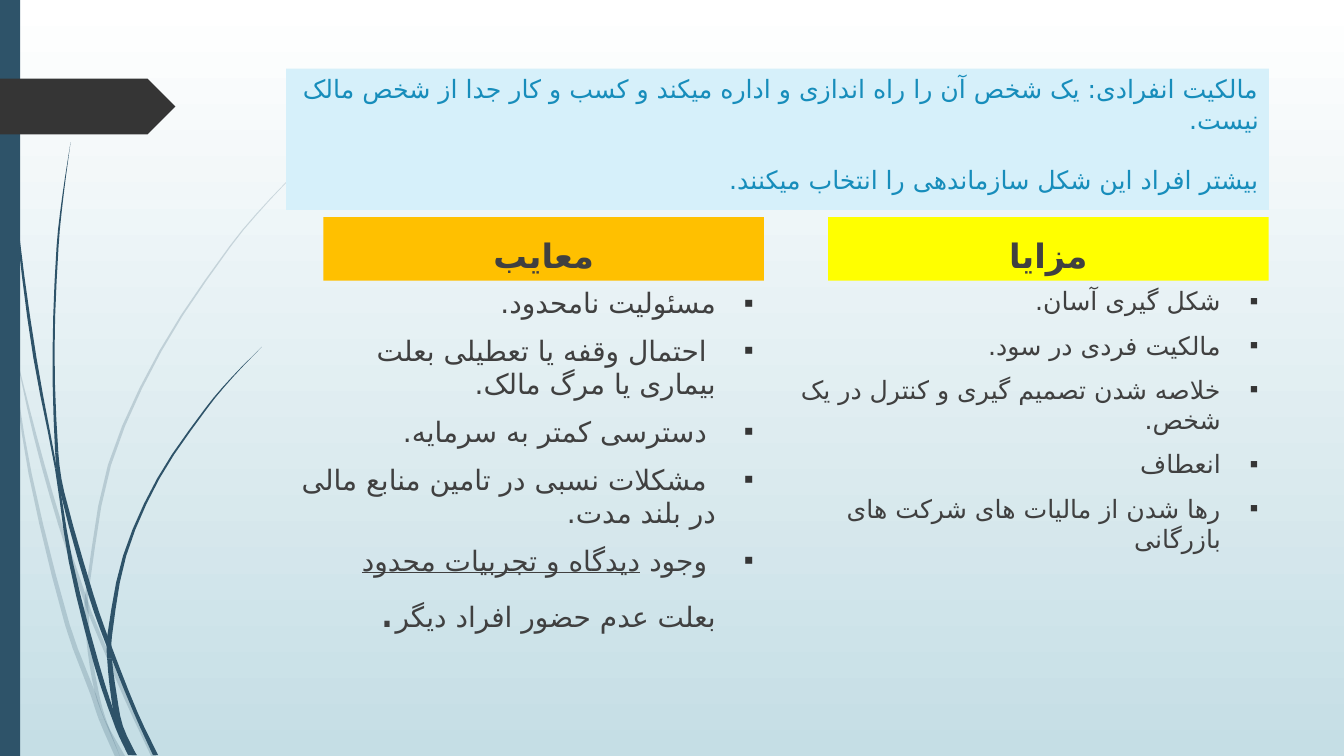
from itertools import pairwise
from math import dist

from lxml import etree
from pptx import Presentation
from pptx import util as u
from pptx.dml import color
from pptx.enum import shapes, text
from pptx.oxml import ns

FONT, ARABIC_FONT = "Quicksand", "DejaVu Sans"
NAVY, CHARCOAL, BODY_GRAY, TITLE_BLUE = "2E5369", "353535", "404040", "178DBB"
SLIDE_WIDTH, SLIDE_HEIGHT = 33.87, 19.05
HEADING_TOP, HEADING_WIDTH, HEADING_HEIGHT = 5.47, 11.1, 1.6
LIST_WIDTH, LIST_HEIGHT = 12.06, 9.32
CURVE_STEPS = 3

PALE_WISPS = [
    ([1, 5], [(0, 7.38, 0.1), (0.28, 8.9, 0.03), (0.76, 11.94, 0.08),
              (1.7, 15.75, 0.12), (2.35, 17.5, 0.14), (2.57, 18.14, 0.15),
              (3.02, 19.05, 0.26)]),
    ([3, 4], [(0.36, 8.76, 0), (0.89, 11, 0.08), (1.52, 13.23, 0.1),
              (2.18, 15.19, 0.1), (2.29, 15.5, 0.1), (3.18, 17.6, 0.1),
              (3.87, 19.05, 0.13)]),
    ([5, 6, 8], [(7.92, 3.89, 0), (6.81, 5.02, 0.03), (5.8, 6.21, 0.04),
                 (4.04, 8.85, 0.06), (2.76, 11.72, 0.08), (2.2, 14.88, 0.08),
                 (2.18, 15.37, 0.1), (2.26, 16.41, 0.1), (2.44, 17.45, 0.1),
                 (2.62, 18.05, 0.05), (3.02, 19.05, 0)]),
]
DARK_WISPS = [
    ([4, 7], [(0.09, 0, 0.02), (0.19, 2.79, 0.03), (0.46, 5.92, 0.05),
              (0.88, 9.02, 0.08), (1.41, 11.81, 0.05), (1.78, 14.14, 0.1),
              (2.43, 16.73, 0.13), (2.97, 18.34, 0.12), (3.34, 19.03, 0.22)]),
    ([4, 5, 7], [(1.78, 3.58, 0), (1.59, 4.9, 0.03), (1.45, 6.22, 0.05),
                 (1.35, 8.86, 0.05), (1.43, 11.4, 0.08), (1.57, 12.4, 0.1),
                 (2.3, 15.01, 0.13), (2.74, 16.26, 0.12), (3.42, 17.96, 0.1),
                 (3.92, 19.03, 0.13)]),
    ([5, 6, 8], [(6.6, 8.74, 0), (5.87, 9.49, 0.03), (5.19, 10.3, 0.05),
                 (3.99, 12.06, 0.06), (3.14, 14.01, 0.08), (2.76, 16.05, 0.12),
                 (2.76, 16.59, 0.12), (2.87, 17.53, 0.15), (3.02, 18.29, 0.15),
                 (3.38, 19.03, 0.12)]),
]

TITLE = [
    "مالکیت انفرادی: یک شخص آن را راه اندازی و اداره میکند و کسب و کار جدا از شخص مالک نیست.",
    "بیشتر افراد این شکل سازماندهی را انتخاب میکنند.",
]
DISADVANTAGES = [
    ["مسئولیت نامحدود."],
    [" احتمال وقفه یا تعطیلی بعلت بیماری یا مرگ مالک."],
    [" دسترسی کمتر به سرمایه."],
    [" مشکلات نسبی در تامین منابع مالی در بلند مدت."],
    [" وجود ", "دیدگاه و تجربیات محدود ", "بعلت عدم حضور افراد دیگر", "."],
]
ADVANTAGES = [
    ["شکل گیری آسان."],
    ["مالکیت فردی در سود."],
    ["خلاصه شدن تصمیم گیری و کنترل در یک شخص."],
    ["انعطاف"],
    ["رها شدن از مالیات های شرکت های بازرگانی"],
]


def rgb(value):
    return color.RGBColor.from_string(value)


def fill_solid(shape, value):
    shape.fill.solid()
    shape.fill.fore_color.rgb = rgb(value)


def paint(shape, value, alpha=None):
    shape.shadow.inherit = False
    shape.line.fill.background()
    fill_solid(shape, value)
    if alpha:
        tint = shape.element.spPr.find(".//" + ns.qn("a:srgbClr"))
        etree.SubElement(tint, ns.qn("a:alpha"), val=str(alpha * 1000))


def add_block(slide, kind, top, width, height, value):
    block = slide.shapes.add_shape(kind, 0, u.Cm(top), u.Cm(width), u.Cm(height))
    paint(block, value)


def smooth(knots):
    """Return points of a Hermite curve through the knots, timed by chord length."""
    last = len(knots) - 1
    slopes = []
    for index in range(last + 1):
        near = knots[max(index - 1, 0):index + 2]
        length = sum(dist(a, b) for a, b in pairwise(near))
        slopes.append([(b - a) / length for a, b in zip(near[0], near[-1])])
    points = []
    for index in range(last):
        start, end = knots[index:index + 2]
        chord = dist(start, end)
        for step in range(CURVE_STEPS):
            t = step / CURVE_STEPS
            blend = t * t * (3 - 2 * t)
            points.append([
                a + (b - a) * blend + chord * t * (1 - t) * (m * (1 - t) - n * t)
                for a, b, m, n in zip(start, end, *slopes[index:index + 2])])
    return points + [knots[-1]]


def add_strand(slide, curve, alpha):
    left = [(u.Cm(x - width / 2), u.Cm(y)) for x, y, width in curve]
    right = [(u.Cm(x + width / 2), u.Cm(y)) for x, y, width in reversed(curve)]
    builder = slide.shapes.build_freeform(*left[0])
    builder.add_line_segments(left[1:] + right)
    paint(builder.convert_to_shape(), NAVY, alpha)


def add_wisp(slide, joints, knots, alpha=None):
    curve = smooth(knots)
    for start, end in pairwise([0, *joints, len(knots) - 1]):
        add_strand(slide, curve[start * CURVE_STEPS:end * CURVE_STEPS + 1], alpha)


def place(shape, left, top, width, height, anchor):
    shape.left, shape.top = u.Cm(left), u.Cm(top)
    shape.width, shape.height = u.Cm(width), u.Cm(height)
    frame = shape.text_frame
    frame.word_wrap = True
    frame.auto_size = text.MSO_AUTO_SIZE.NONE
    frame.vertical_anchor = anchor
    shape.element.getparent().append(shape.element)


def set_font(paragraph, size, value, bold=False):
    font = paragraph.font
    font.name, font.size, font.bold = FONT, u.Pt(size), bold
    font.color.rgb = rgb(value)
    defaults = paragraph._p.pPr.find(ns.qn("a:defRPr"))
    etree.SubElement(defaults, ns.qn("a:cs"), typeface=ARABIC_FONT)


def align_right_to_left(paragraph):
    paragraph.alignment = text.PP_ALIGN.RIGHT
    paragraph._p.get_or_add_pPr().set("rtl", "1")


def add_bullet(paragraph):
    properties = paragraph._p.get_or_add_pPr()
    properties.set("marL", str(u.Cm(0.95)))
    properties.set("indent", str(-u.Cm(0.95)))
    bullet_color = etree.SubElement(properties, ns.qn("a:buClr"))
    etree.SubElement(bullet_color, ns.qn("a:srgbClr"), val=CHARCOAL)
    etree.SubElement(properties, ns.qn("a:buChar"), char="▪")


def fill_title(title):
    place(title, 7.21, 1.73, 24.77, 3.56, text.MSO_ANCHOR.TOP)
    fill_solid(title, "D6F0FA")
    title.text_frame.text = "\n".join(TITLE)
    for index, paragraph in enumerate(title.text_frame.paragraphs):
        align_right_to_left(paragraph)
        paragraph.space_before = u.Pt(21.6 * index)
        set_font(paragraph, 18, TITLE_BLUE)


def fill_heading(heading, right, words, value):
    place(heading, right - HEADING_WIDTH, HEADING_TOP, HEADING_WIDTH,
          HEADING_HEIGHT, text.MSO_ANCHOR.BOTTOM)
    fill_solid(heading, value)
    heading.text_frame.text = words
    paragraph = heading.text_frame.paragraphs[0]
    paragraph.alignment = text.PP_ALIGN.CENTER
    paragraph.space_before = u.Pt(10)
    set_font(paragraph, 24, BODY_GRAY, bold=True)


def fill_list(body, right, items, size):
    place(body, right - LIST_WIDTH, HEADING_TOP + HEADING_HEIGHT, LIST_WIDTH,
          LIST_HEIGHT, text.MSO_ANCHOR.TOP)
    body.text_frame.text = "\n".join("".join(parts) for parts in items[:-1]) + "\n"
    for part in items[-1]:
        body.text_frame.paragraphs[-1].add_run().text = part
    for paragraph in body.text_frame.paragraphs:
        align_right_to_left(paragraph)
        paragraph.space_before = u.Pt(10)
        add_bullet(paragraph)
        set_font(paragraph, size, BODY_GRAY)


def set_background(slide):
    fill = slide.background.fill
    fill.gradient()
    fill.gradient_angle = 270
    for stop, value in zip(fill.gradient_stops, ("FFFFFF", "C5DEE5")):
        stop.color.rgb = rgb(value)


def main():
    presentation = Presentation()
    presentation.slide_width = u.Cm(SLIDE_WIDTH)
    presentation.slide_height = u.Cm(SLIDE_HEIGHT)
    slide = presentation.slides.add_slide(presentation.slide_layouts[4])
    set_background(slide)
    for wisps, alpha in ((PALE_WISPS, 20), (DARK_WISPS, None)):
        for joints, knots in wisps:
            add_wisp(slide, joints, knots, alpha)
    add_block(slide, shapes.MSO_SHAPE.RECTANGLE, 0, 0.51, SLIDE_HEIGHT, NAVY)
    add_block(slide, shapes.MSO_SHAPE.PENTAGON, 1.98, 4.42, 1.41, CHARCOAL)
    title, left_heading, left_list, right_heading, right_list = list(slide.placeholders)
    fill_title(title)
    fill_heading(left_heading, 19.25, "معایب", "FFC000")
    fill_list(left_list, 19.25, DISADVANTAGES, 20)
    fill_heading(right_heading, 31.97, "مزایا", "FFFF00")
    fill_list(right_list, 31.97, ADVANTAGES, 18)
    experience = left_list.text_frame.paragraphs[-1].runs
    experience[1].font.underline = True
    experience[-1].font.size = u.Pt(36)
    presentation.save("out.pptx")


if __name__ == "__main__":
    main()
